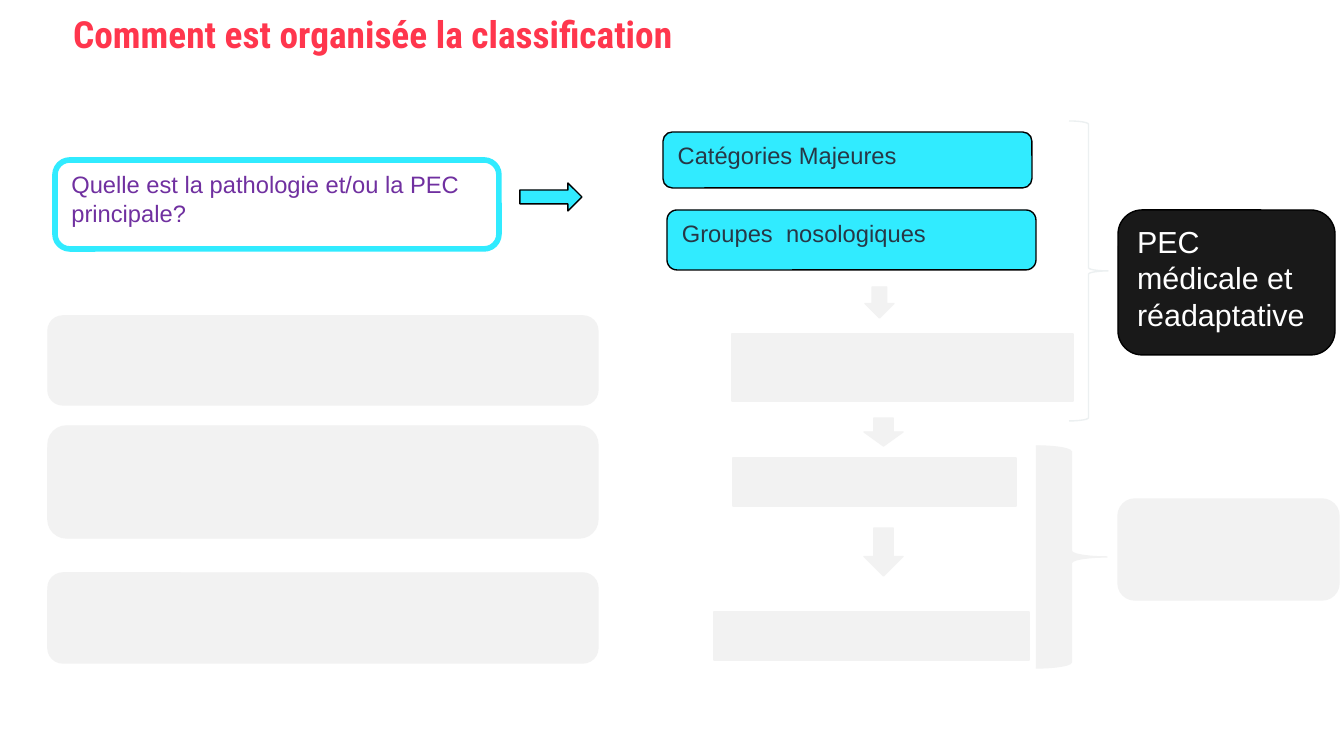
import pptx
import pptx.dml.color
import pptx.enum.shapes
import pptx.enum.text
import pptx.util

EMU_PER_PX = 914400 / 134.4
COLOURS = {
    "title": "FF364D",
    "cyan": "31EBFF",
    "black": "000000",
    "dark": "191919",
    "slate": "273746",
    "purple": "7030A0",
    "faint": "F2F2F2",
    "pale": "ECF0F1",
    "white": "FFFFFF",
}
SHAPES = pptx.enum.shapes.MSO_SHAPE
LEFT_COLUMN, LEFT_WIDTH = 48, 550


def px(value):
    return pptx.util.Emu(round(value * EMU_PER_PX))


def colour(name):
    return pptx.dml.color.RGBColor.from_string(COLOURS[name])


def apply(target, values):
    for name, value in values.items():
        setattr(target, name, value)


def write(shape, text, size, text_colour, font="Arial", bold=False, inset=6):
    frame = shape.text_frame
    apply(frame, {
        "word_wrap": True,
        "auto_size": pptx.enum.text.MSO_AUTO_SIZE.NONE,
        "vertical_anchor": pptx.enum.text.MSO_ANCHOR.TOP,
        "margin_left": px(12), "margin_right": px(12),
        "margin_top": px(inset), "margin_bottom": px(inset),
    })
    paragraph = frame.paragraphs[0]
    paragraph.alignment = pptx.enum.text.PP_ALIGN.LEFT
    run = paragraph.add_run()
    run.text = text
    apply(run.font, {"name": font, "size": pptx.util.Pt(size), "bold": bold})
    run.font.color.rgb = colour(text_colour)
    return paragraph


def add_figure(slide, kind, box, fill="faint", line="faint", weight=0.75):
    shape = slide.shapes.add_shape(kind, *(px(value) for value in box))
    shape.shadow.inherit = False
    if fill:
        shape.fill.solid()
        shape.fill.fore_color.rgb = colour(fill)
    else:
        shape.fill.background()
    shape.line.color.rgb = colour(line)
    shape.line.width = pptx.util.Pt(weight)
    return shape


def add_title(slide, text):
    title = slide.shapes.title
    apply(title, {"left": px(61), "top": px(0), "width": px(1283), "height": px(56)})
    paragraph = write(title, text, 20, "title", "Roboto Condensed", True, inset=0)
    paragraph.line_spacing = pptx.util.Pt(30)


def add_questions(slide):
    # Highlighted question
    box = add_figure(slide, SHAPES.ROUNDED_RECTANGLE, (55, 160, 444, 89), None, "cyan", 3)
    write(box, "Quelle est la pathologie et/ou la PEC principale?", 12.7, "purple")
    add_figure(slide, SHAPES.RIGHT_ARROW, (520, 183, 62, 28), "cyan", "black")

    # Faded questions
    for top, height in ((316, 89), (426, 112), (573, 90)):
        add_figure(slide, SHAPES.ROUNDED_RECTANGLE, (LEFT_COLUMN, top, LEFT_WIDTH, height))


def add_levels(slide):
    # Highlighted levels
    for box, text in (
        ((663, 132, 369, 56), "Catégories Majeures"),
        ((667, 210, 369, 60), "Groupes  nosologiques"),
    ):
        shape = add_figure(slide, SHAPES.ROUNDED_RECTANGLE, box, "cyan", "black")
        write(shape, text, 12.7, "slate")

    # Faded levels
    for box in ((732, 334, 341, 67), (733, 458, 283, 48), (714, 612, 315, 48)):
        add_figure(slide, SHAPES.RECTANGLE, box)

    # Arrows between levels
    for box in ((865, 287, 29, 31), (864, 418, 39, 28), (864, 528, 39, 48)):
        add_figure(slide, SHAPES.DOWN_ARROW, box)


def add_groups(slide):
    # Braces
    add_figure(slide, SHAPES.RIGHT_BRACE, (1069, 121, 39, 300), None, "pale")
    add_figure(slide, SHAPES.RIGHT_BRACE, (1036, 446, 71, 222))

    # Group labels
    label = add_figure(
        slide, SHAPES.ROUNDED_RECTANGLE, (1118, 210, 217, 145), "dark", "black")
    write(label, "PEC  médicale et réadaptative", 16.3, "white")
    add_figure(slide, SHAPES.ROUNDED_RECTANGLE, (1118, 499, 221, 101))


def main():
    presentation = pptx.Presentation()
    apply(presentation, {"slide_width": px(1344), "slide_height": px(756)})
    slide = presentation.slides.add_slide(presentation.slide_layouts[5])
    add_title(slide, "Comment est organisée la classification")
    add_questions(slide)
    add_levels(slide)
    add_groups(slide)
    presentation.save("out.pptx")


if __name__ == "__main__":
    main()
